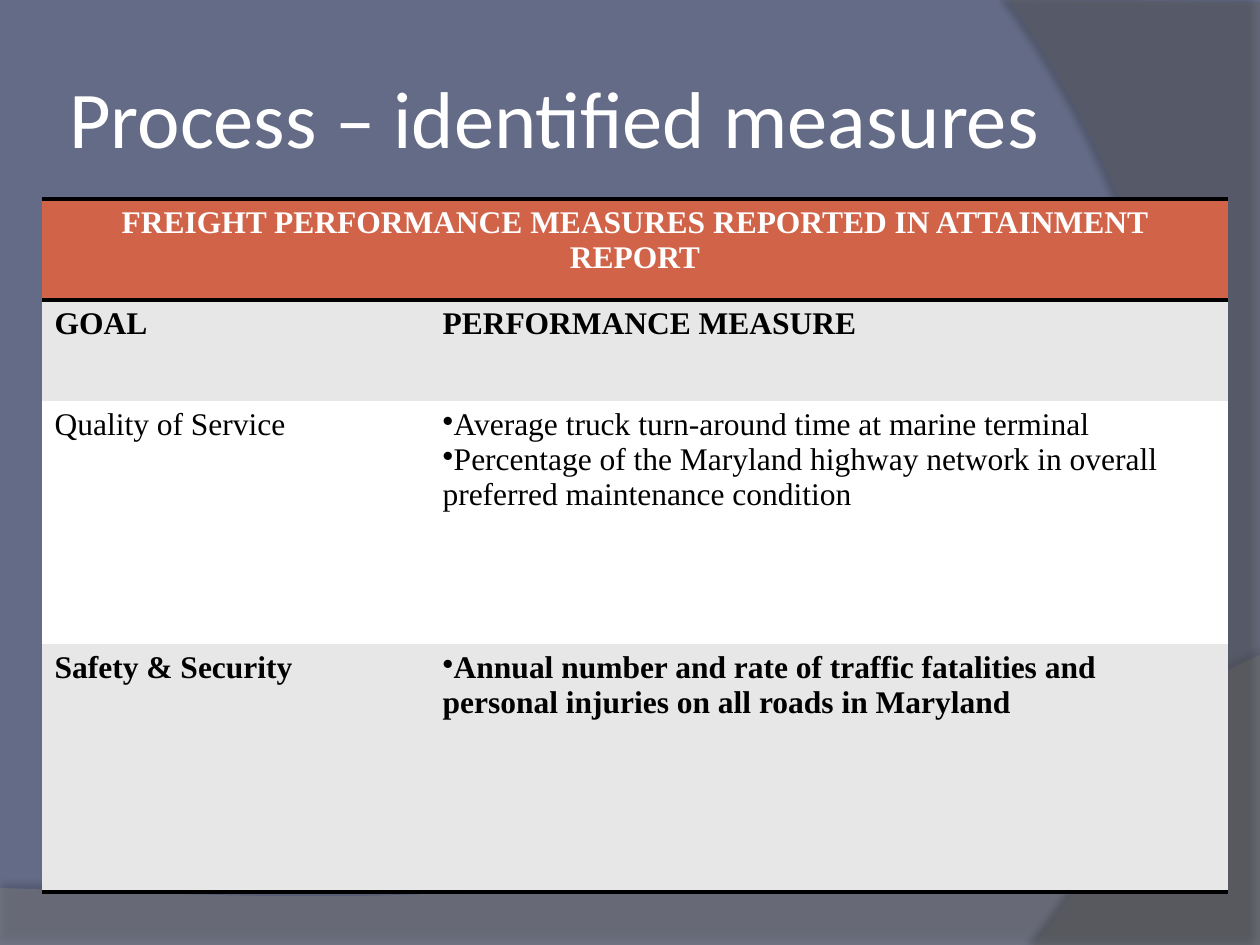
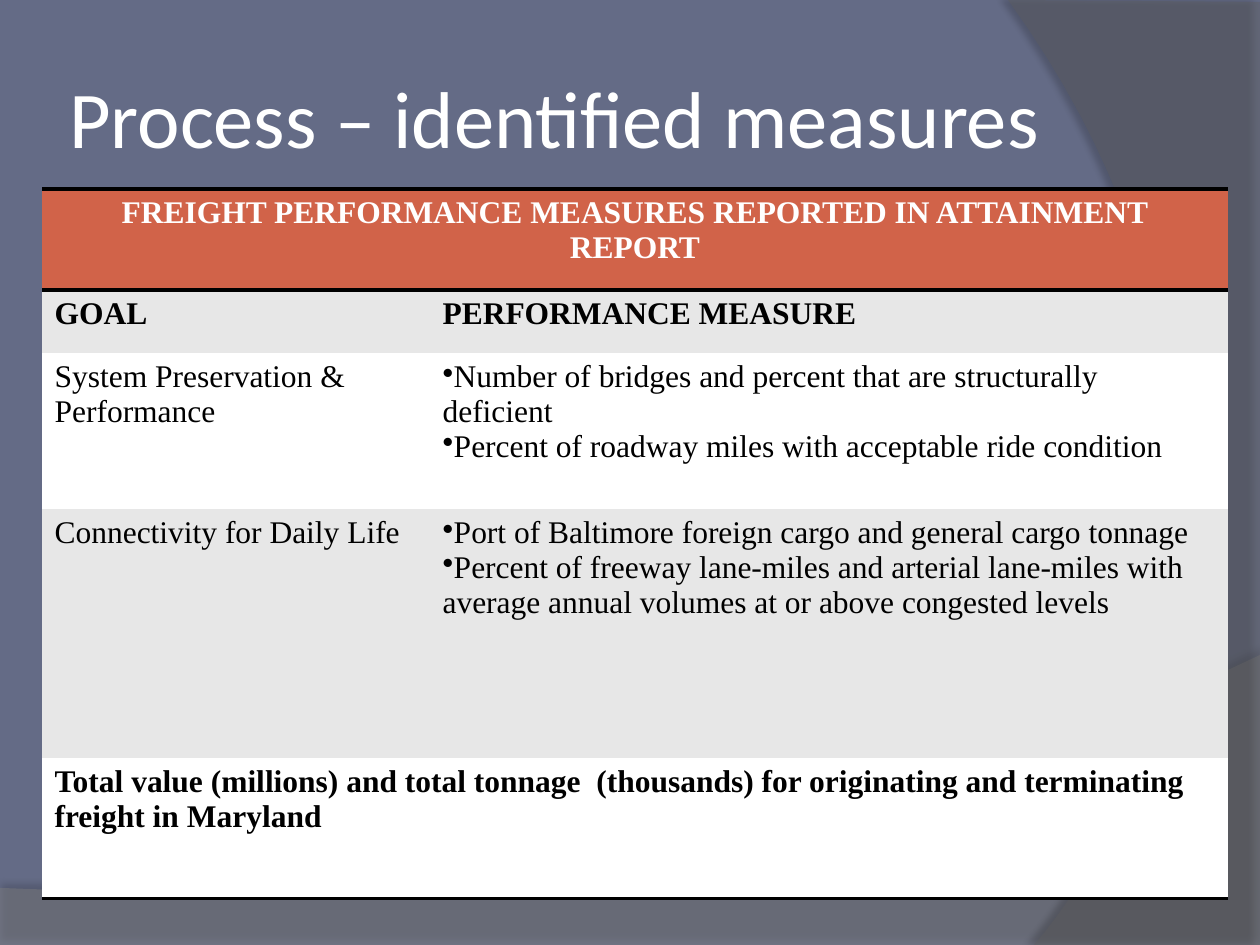
"""Build two slides of freight performance measures."""
from lxml import etree
from pptx import Presentation
from pptx import util as u
from pptx.dml.color import RGBColor
from pptx.enum import text
from pptx.oxml import parse_xml
from pptx.oxml.ns import nsdecls, qn

TITLE = "Process – identified measures"
HEADER = ["FREIGHT PERFORMANCE MEASURES REPORTED IN ATTAINMENT REPORT"]
COLUMNS = ["GOAL", "PERFORMANCE MEASURE"]

# Each row: height, bold, cells; a list inside a row is a bulleted cell.
SLIDES = [
    (199, [
        (101, True, HEADER),
        (101, True, COLUMNS),
        (243, False, ["Quality of Service", [
            "Average truck turn-around time at marine terminal",
            "Percentage of the Maryland highway network in overall preferred maintenance condition"]]),
        (248, True, ["Safety & Security", [
            "Annual number and rate of traffic fatalities and personal injuries on all roads in Maryland"]]),
    ]),
    (189, [
        (101, True, HEADER),
        (63, True, COLUMNS),
        (156, False, ["System Preservation & Performance", [
            "Number of bridges and percent that are structurally deficient",
            "Percent of roadway miles with acceptable ride condition"]]),
        (249, False, ["Connectivity for Daily Life", [
            "Port of Baltimore foreign cargo and general cargo tonnage",
            "Percent of freeway lane-miles and arterial lane-miles with average annual volumes "
            "at or above congested levels"]]),
        (141, True, ["Total value (millions) and total tonnage  (thousands) for originating "
                     "and terminating freight in Maryland"]),
    ]),
]

SLATE = RGBColor(0x64, 0x6B, 0x86)
WAVE_GRAY = RGBColor(0x7F, 0x7F, 0x7F)
ARC_GRAY = RGBColor(0x5E, 0x5E, 0x5E)
ORANGE = RGBColor(0xD1, 0x63, 0x49)
BAND = RGBColor(0xE7, 0xE7, 0xE7)
WHITE = RGBColor(0xFF, 0xFF, 0xFF)
BLACK = RGBColor(0, 0, 0)

PX = 914400 / 126
TABLE_LEFT, COL_WIDTHS = 42, (388, 798)
NO_STYLE = "{2D5ABB26-0587-4C30-8999-92F81FD0307C}"

# Each band: straight points, Bezier curve, colour, alpha, shadow (alpha, blur, distance, angle).
BANDS = [
    ([(0, 945), (1260, 945)], [(1260, 655), (704, 919), (493, 906), (0, 888)],
     WAVE_GRAY, 45, (35, 4, 3.5, 270)),
    ([(1260, 2), (1260, 945)], [(1034, 945), (1178, 780), (1283, 378), (1008, 0)],
     ARC_GRAY, 40, (45, 4, 4, 180)),
]


def px(n):
    return u.Emu(round(n * PX))


def bezier(points, steps=40):
    for i in range(steps + 1):
        t = i / steps
        weights = ((1 - t) ** 3, 3 * t * (1 - t) ** 2, 3 * t * t * (1 - t), t ** 3)
        yield tuple(sum(w * pt[k] for w, pt in zip(weights, points)) for k in (0, 1))


def add_band(s, corners, curve, color, alpha, shadow):
    points = [(px(x), px(y)) for x, y in corners + list(bezier(curve))]
    builder = s.shapes.build_freeform(*points[0])
    builder.add_line_segments(points[1:])
    sp = builder.convert_to_shape()
    sp.fill.solid()
    sp.fill.fore_color.rgb = color
    sp.line.fill.background()
    tint = sp._element.spPr.find(qn("a:solidFill"))[0]
    etree.SubElement(tint, qn("a:alpha"), val=str(alpha * 1000))
    opacity, blur, dist, angle = shadow
    sp._element.spPr.append(parse_xml(
        f'<a:effectLst {nsdecls("a")}><a:outerShdw blurRad="{u.Pt(blur)}" dist="{u.Pt(dist)}" '
        f'dir="{angle * 60000}" algn="ctr" rotWithShape="0"><a:srgbClr val="{BLACK}">'
        f'<a:alpha val="{opacity * 1000}"/></a:srgbClr></a:outerShdw></a:effectLst>'))


def add_run(p, words, size, font, color, bold=False):
    r = p.add_run()
    r.text = words
    r.font.size = u.Pt(size)
    r.font.name = font
    r.font.bold = bold
    r.font.color.rgb = color


def add_title(s):
    tf = s.shapes.add_textbox(px(63), px(38), px(1029), px(157)).text_frame
    tf.word_wrap = True
    tf.vertical_anchor = text.MSO_ANCHOR.MIDDLE
    tf.margin_left = tf.margin_right = tf.margin_top = tf.margin_bottom = u.Inches(0.05)
    add_run(tf.paragraphs[0], TITLE, 46, "Calibri", WHITE)


def add_border(cell, side):
    cell._tc.get_or_add_tcPr().insert(0, parse_xml(
        f'<a:{side} {nsdecls("a")} w="{u.Pt(2)}"><a:solidFill><a:srgbClr val="{BLACK}"/>'
        f'</a:solidFill></a:{side}>'))


def fill_cell(cell, content, bold, header):
    bulleted = isinstance(content, list)
    tf = cell.text_frame
    for i, words in enumerate(content if bulleted else [content]):
        p = tf.add_paragraph() if i else tf.paragraphs[0]
        if header:
            p.alignment = text.PP_ALIGN.CENTER
        if bulleted:
            etree.SubElement(p._p.get_or_add_pPr(), qn("a:buChar"), char="•")
        add_run(p, words, 18, "Times New Roman", WHITE if header else BLACK, bold)


def add_measures(s, top, rows):
    heights = [height for height, _, _ in rows]
    table = s.shapes.add_table(len(rows), len(COL_WIDTHS), px(TABLE_LEFT), px(top),
                               px(sum(COL_WIDTHS)), px(sum(heights))).table
    table.first_row = table.horz_banding = False
    table._tbl.tblPr.find(qn("a:tableStyleId")).text = NO_STYLE
    for column, width in zip(table.columns, COL_WIDTHS):
        column.width = px(width)
    last = len(rows) - 1
    for i, (height, bold, contents) in enumerate(rows):
        table.rows[i].height = px(height)
        cells = list(table.rows[i].cells)
        for cell in cells:
            cell.fill.solid()
            cell.fill.fore_color.rgb = ORANGE if i == 0 else BAND if i % 2 else WHITE
            if i in (0, last):
                add_border(cell, "lnB")
            if i == 0:
                add_border(cell, "lnT")
        if len(contents) == 1:
            cells[0].merge(cells[-1])
        for cell, content in zip(cells, contents):
            fill_cell(cell, content, bold, i == 0)


def main():
    prs = Presentation()
    prs.slide_width, prs.slide_height = px(1260), px(945)
    for top, rows in SLIDES:
        s = prs.slides.add_slide(prs.slide_layouts[6])
        s.background.fill.solid()
        s.background.fill.fore_color.rgb = SLATE
        for band in BANDS:
            add_band(s, *band)
        add_title(s)
        add_measures(s, top, rows)
    prs.save("out.pptx")


if __name__ == "__main__":
    main()
